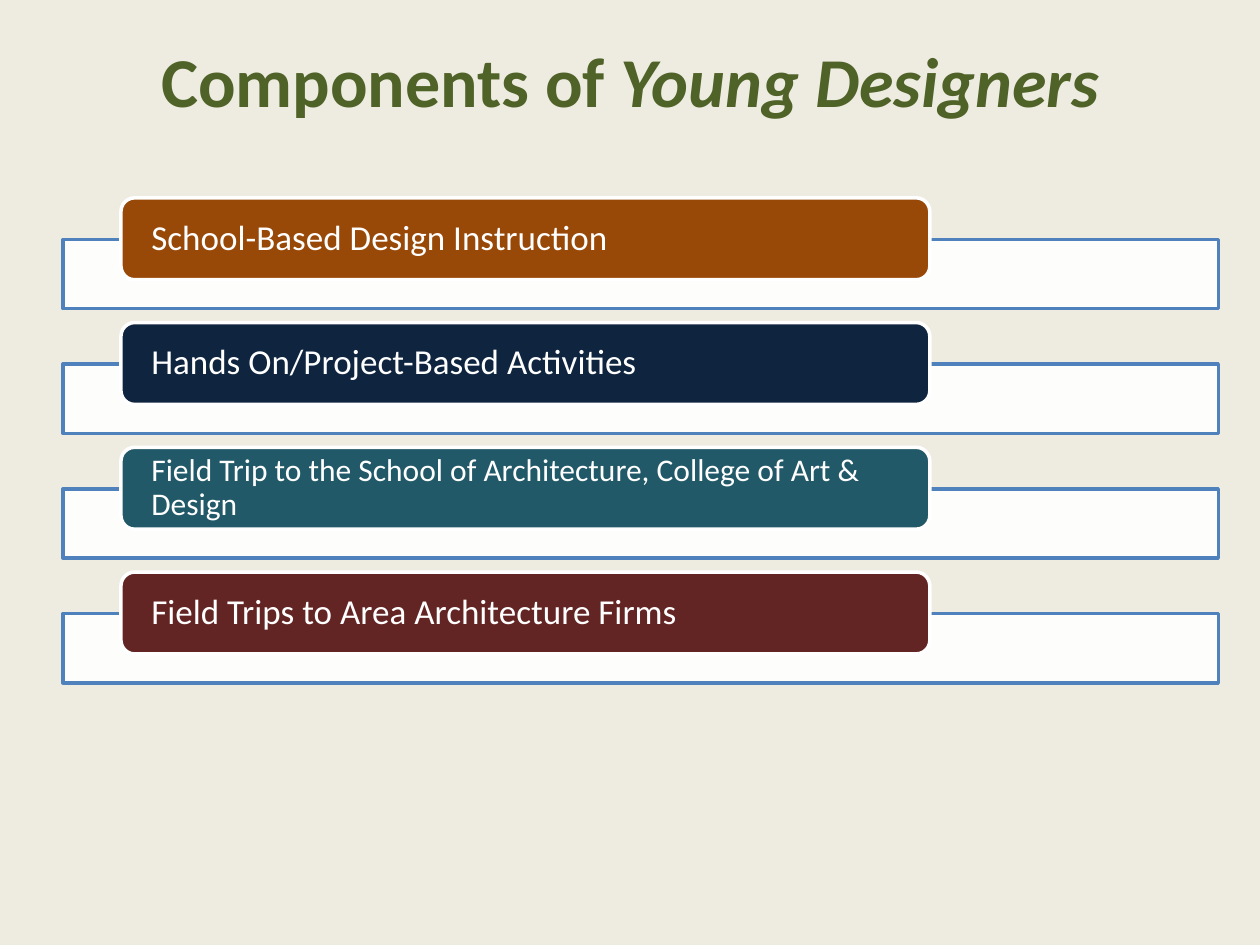
from dataclasses import dataclass
from typing import Any

from lxml.etree import SubElement
from pptx import Presentation
from pptx.dml.color import RGBColor
from pptx.enum.shapes import MSO_SHAPE
from pptx.enum.text import MSO_ANCHOR, MSO_AUTO_SIZE, PP_ALIGN
from pptx.oxml.ns import qn
from pptx.util import Inches, Pt

CREAM = RGBColor(0xEE, 0xEC, 0xE1)
WHITE = RGBColor(0xFF, 0xFF, 0xFF)
BLUE = RGBColor(0x4F, 0x81, 0xBD)
GREEN = RGBColor(0x4F, 0x62, 0x28)
RUST = RGBColor(0x98, 0x48, 0x07)
NAVY = RGBColor(0x0F, 0x24, 0x3E)
TEAL = RGBColor(0x21, 0x59, 0x68)
MAROON = RGBColor(0x63, 0x25, 0x23)

FONT = "Calibri"
BAR_TOP = 1.9
TAB_TOP = 1.57
STEP = 0.99


@dataclass
class Item:
    text: str
    fill: RGBColor
    size: int = 20


ITEMS = [
    Item("School-Based Design Instruction", RUST),
    Item("Hands On/Project-Based Activities", NAVY),
    Item("Field Trip to the School of Architecture, College of Art & Design", TEAL, 18),
    Item("Field Trips to Area Architecture Firms", MAROON),
]


def apply(target: Any, **values: Any) -> None:
    for name, value in values.items():
        setattr(target, name, value)


def add_run(para: Any, text: str, color: RGBColor, size: int, **style: Any) -> None:
    run = para.add_run()
    run.text = text
    apply(run.font, name=FONT, size=Pt(size), **style)
    run.font.color.rgb = color


def add_box(slide: Any, kind: MSO_SHAPE, box: tuple[float, ...],
            fill: RGBColor, line: RGBColor) -> Any:
    shape = slide.shapes.add_shape(kind, *map(Inches, box))
    shape.shadow.inherit = False
    shape.fill.solid()
    shape.fill.fore_color.rgb = fill
    shape.line.color.rgb = line
    shape.line.width = Pt(2)
    return shape


def add_item(slide: Any, row: int, item: Item) -> None:
    drop = row * STEP
    bar = add_box(slide, MSO_SHAPE.RECTANGLE, (0.5, BAR_TOP + drop, 9.17, 0.55), WHITE, BLUE)
    color = bar.fill._xPr.find(qn("a:solidFill"))[0]
    SubElement(color, qn("a:alpha"), val="90000")

    tab = add_box(slide, MSO_SHAPE.ROUNDED_RECTANGLE,
                  (0.96, TAB_TOP + drop, 6.42, 0.65), item.fill, WHITE)
    frame = tab.text_frame
    apply(frame, word_wrap=True, vertical_anchor=MSO_ANCHOR.MIDDLE,
          margin_left=Inches(0.21), margin_right=Inches(0.21),
          margin_top=0, margin_bottom=0)
    para = frame.paragraphs[0]
    apply(para, alignment=PP_ALIGN.LEFT, line_spacing=0.9)
    add_run(para, item.text, WHITE, item.size)


def add_title(slide: Any) -> None:
    title = slide.shapes.title
    apply(title, left=0, top=Inches(0.25), width=Inches(10), height=Inches(0.77))
    frame = title.text_frame
    apply(frame, word_wrap=True, auto_size=MSO_AUTO_SIZE.NONE,
          vertical_anchor=MSO_ANCHOR.TOP)
    para = frame.paragraphs[0]
    para.alignment = PP_ALIGN.CENTER
    add_run(para, "Components of ", GREEN, 40, bold=True)
    add_run(para, "Young Designers", GREEN, 40, bold=True, italic=True)


def main() -> None:
    deck = Presentation()
    apply(deck, slide_width=Inches(10), slide_height=Inches(7.5))
    slide = deck.slides.add_slide(deck.slide_layouts[5])
    slide.background.fill.solid()
    slide.background.fill.fore_color.rgb = CREAM
    add_title(slide)
    for row, item in enumerate(ITEMS):
        add_item(slide, row, item)
    deck.save("out.pptx")


if __name__ == "__main__":
    main()
